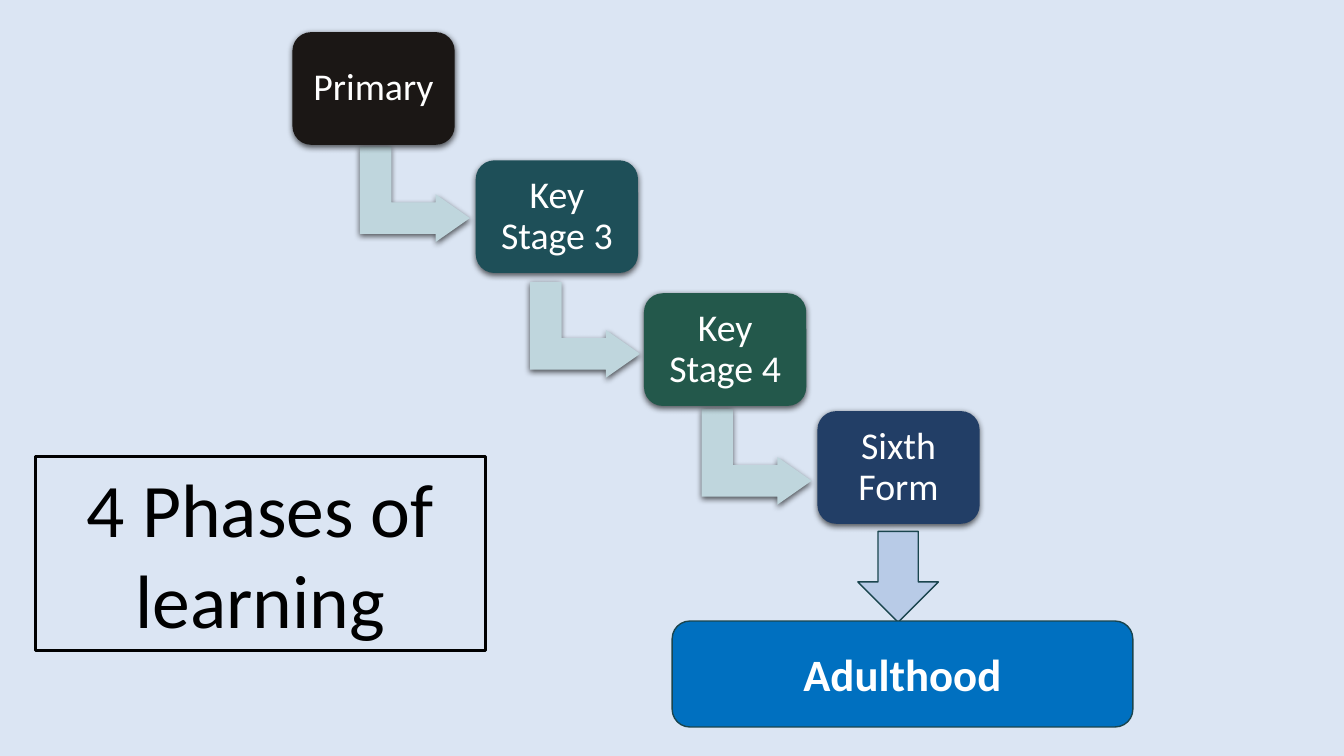
from lxml.etree import SubElement
from pptx import Presentation
from pptx.dml.color import RGBColor
from pptx.enum.shapes import MSO_SHAPE
from pptx.enum.text import MSO_ANCHOR, PP_ALIGN
from pptx.oxml.ns import qn
from pptx.util import Cm, Pt

COLORS = {
    "background": "DBE5F3",
    "primary": "1B1715",
    "key_stage_3": "1E4F58",
    "key_stage_4": "23584B",
    "sixth_form": "223E66",
    "step_arrow": "BFD6DD",
    "down_arrow": "B8CBE7",
    "adulthood": "0070C0",
    "outline": "1A454E",
    "black": "000000",
    "white": "FFFFFF",
}

STAGES = [
    ("Primary", "primary", (7.37, 0.81), (9.25, 3.51)),
    ("Key Stage 3", "key_stage_3", (11.99, 4.04), (13.54, 6.93)),
    ("Key Stage 4", "key_stage_4", (16.23, 7.39), (17.86, 10.13)),
    ("Sixth Form", "sixth_form", (20.6, 10.36), None),
]


class PhaseSlide:
    """Holds the style and the current slide, and draws each kind of element."""

    font = "Calibri"
    card_size = (4.09, 2.84)
    step_size = (2.41, 2.77)

    def __init__(self, presentation):
        self.slide = presentation.slides.add_slide(presentation.slide_layouts[6])
        self.paint(self.slide.background.fill, "background")

    def paint(self, fill, color):
        fill.solid()
        fill.fore_color.rgb = RGBColor.from_string(COLORS[color])

    def shape(self, kind, position, size, fill=None, line=None, width=1):
        shape = self.slide.shapes.add_shape(kind, *map(Cm, position + size))
        shape.shadow.inherit = False
        if fill:
            self.paint(shape.fill, fill)
        else:
            shape.fill.background()
        if line:
            self.paint(shape.line.fill, line)
            shape.line.width = Pt(width)
        else:
            shape.line.fill.background()
        return shape

    def shadow(self, shape):
        effects = shape._element.spPr.find(qn("a:effectLst"))
        shadow = SubElement(
            effects, qn("a:outerShdw"), blurRad=str(Pt(4.5)), dist=str(Pt(1.5)),
            dir="5400000", algn="ctr", rotWithShape="0")
        color = SubElement(shadow, qn("a:srgbClr"), val=COLORS["black"])
        SubElement(color, qn("a:alpha"), val="63000")

    def text(self, shape, wording, size, color, anchor=MSO_ANCHOR.MIDDLE, bold=False):
        frame = shape.text_frame
        frame.word_wrap = True
        frame.vertical_anchor = anchor
        paragraph = frame.paragraphs[0]
        paragraph.alignment = PP_ALIGN.CENTER
        run = paragraph.add_run()
        run.text = wording
        run.font.name = self.font
        run.font.size = Pt(size)
        run.font.bold = bold
        run.font.color.rgb = RGBColor.from_string(COLORS[color])
        return frame

    def step_arrow(self, position):
        arrow = self.shape(MSO_SHAPE.BENT_UP_ARROW, position, self.step_size, "step_arrow")
        arrow.rotation = 90
        for index, value in enumerate((0.328, 0.25, 0.358)):
            arrow.adjustments[index] = value
        self.shadow(arrow)

    def card(self, wording, color, position):
        card = self.shape(MSO_SHAPE.ROUNDED_RECTANGLE, position, self.card_size, color)
        self.shadow(card)
        frame = self.text(card, wording, 27, "white")
        frame.paragraphs[0].line_spacing = 0.9
        frame.margin_left = frame.margin_right = Cm(0.28)
        frame.margin_top = frame.margin_bottom = Cm(0.28)

    def title(self, wording, position, size):
        box = self.shape(MSO_SHAPE.RECTANGLE, position, size, line="black", width=2.25)
        self.text(box, wording, 54, "black", MSO_ANCHOR.TOP)

    def down_arrow(self, position, size):
        self.shape(MSO_SHAPE.DOWN_ARROW, position, size, "down_arrow", "outline")

    def goal(self, wording, position, size):
        box = self.shape(MSO_SHAPE.ROUNDED_RECTANGLE, position, size, "adulthood", "outline")
        self.text(box, wording, 32, "white", bold=True)


def main():
    presentation = Presentation()
    presentation.slide_width = Cm(33.87)
    presentation.slide_height = Cm(19.05)
    phases = PhaseSlide(presentation)
    for wording, color, card_position, arrow_position in STAGES:
        if arrow_position:
            phases.step_arrow(arrow_position)
        phases.card(wording, color, card_position)
    phases.title("4 Phases of learning", (0.89, 11.51), (11.35, 4.88))
    phases.down_arrow((21.62, 13.39), (2.03, 2.29))
    phases.goal("Adulthood", (16.94, 15.65), (11.61, 2.67))
    presentation.save("out.pptx")


if __name__ == "__main__":
    main()
